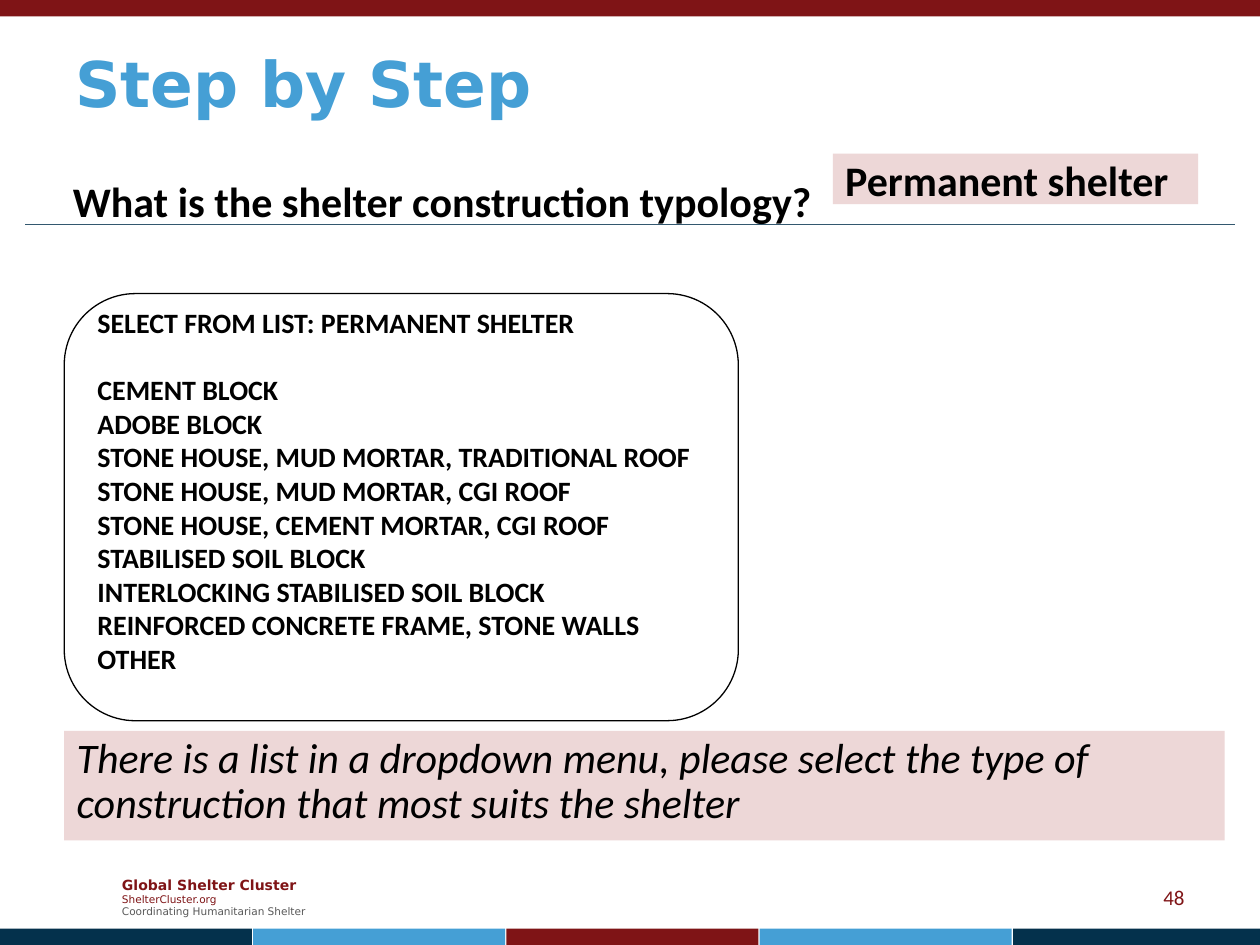
from lxml import etree
from pptx import Presentation, util as u
from pptx.dml.color import RGBColor
from pptx.enum import shapes, text
from pptx.oxml.ns import qn

THEME = {
    "red": "7F1416", "navy": "04314C", "blue": "459FD5", "rule": "33586F",
    "pink": "EDD7D7", "black": "000000", "grey": "595959",
    "body_font": "Calibri", "brand_font": "DejaVu Sans",
    "title": 36, "lead": 24, "list": 16, "number": 12, "footer": 8, "small": 6,
}

TITLE = "Step by Step"
QUESTION = "What is the shelter construction typology?"
ANSWER = "Permanent shelter"
GUIDANCE = ("There is a list in a dropdown menu, please select the type of "
            "construction that most suits the shelter")
LIST_HEADING = "SELECT FROM LIST: PERMANENT SHELTER"
TYPOLOGIES = [
    "CEMENT BLOCK",
    "ADOBE BLOCK",
    "STONE HOUSE, MUD MORTAR, TRADITIONAL ROOF",
    "STONE HOUSE, MUD MORTAR, CGI ROOF",
    "STONE HOUSE, CEMENT MORTAR, CGI ROOF",
    "STABILISED SOIL BLOCK",
    "INTERLOCKING STABILISED SOIL BLOCK",
    "REINFORCED CONCRETE FRAME, STONE WALLS",
    "OTHER",
]
BAND_COLOURS = ["navy", "blue", "red", "blue", "navy"]
PAGE_NUMBER = "48"

RECT = shapes.MSO_SHAPE.RECTANGLE
ROUNDED = shapes.MSO_SHAPE.ROUNDED_RECTANGLE
MIDDLE = text.MSO_ANCHOR.MIDDLE
LIST_LINE = 19.5  # points, one line of the list


def colour(name):
    return RGBColor.from_string(THEME[name])


def style(size, tint="black", font="body_font", **extra):
    return {"size": u.Pt(THEME[size]), "tint": tint, "name": THEME[font], **extra}


def write(box, lines, anchor=text.MSO_ANCHOR.TOP, **layout):
    """Fill a box with (wording, style) lines; layout applies to each paragraph."""
    frame = box.text_frame
    frame.word_wrap = True
    frame.vertical_anchor = anchor
    for index, (wording, look) in enumerate(lines):
        para = frame.add_paragraph() if index else frame.paragraphs[0]
        for key, value in {"alignment": text.PP_ALIGN.LEFT, **layout}.items():
            setattr(para, key, value)
        span = para.add_run()
        span.text = wording
        for key, value in look.items():
            if key == "tint":
                span.font.color.rgb = colour(value)
            else:
                setattr(span.font, key, value)
    return frame


def add_box(page, place, kind=RECT, fill=None, line=None):
    box = page.shapes.add_shape(kind, *map(u.Inches, place))
    box.shadow.inherit = False
    if fill:
        box.fill.solid()
        box.fill.fore_color.rgb = colour(fill)
    else:
        box.fill.background()
    if line:
        box.line.color.rgb = colour(line)
        box.line.width = u.Pt(0.75)
    else:
        box.line.fill.background()
    return box


def add_label(page, place, lines, **layout):
    return write(page.shapes.add_textbox(*map(u.Inches, place)), lines, **layout)


def add_frame(page):
    add_box(page, (0, 0, 10, 0.13), fill="red")
    width = 10 / len(BAND_COLOURS)
    for index, name in enumerate(BAND_COLOURS):
        add_box(page, (index * (width + 0.01), 7.37, width, 0.13), fill=name)
    rule = page.shapes.add_connector(
        shapes.MSO_CONNECTOR.STRAIGHT, *map(u.Inches, (0.2, 1.78, 9.8, 1.78)))
    rule.line.color.rgb = colour("rule")
    rule.line.width = u.Pt(0.75)
    etree.SubElement(rule.element.spPr, qn("a:effectLst"))
    add_label(page, (0.87, 6.9, 1.73, 0.44), [
        ("Global Shelter Cluster", style("footer", "red", "brand_font", bold=True)),
        ("ShelterCluster.org", style("small", "red", "brand_font")),
        ("Coordinating Humanitarian Shelter", style("small", "grey", "brand_font")),
    ], anchor=MIDDLE)
    add_label(page, (7.17, 6.92, 2.33, 0.4), [(PAGE_NUMBER, style("number", "red"))],
              anchor=MIDDLE, alignment=text.PP_ALIGN.RIGHT)


def add_content(page):
    add_label(page, (0.5, 0.3, 9, 0.85),
              [(TITLE, style("title", "blue", "brand_font", bold=True))])
    bold_lead = style("lead", bold=True)
    add_label(page, (0.48, 1.39, 9, 0.55), [(QUESTION, bold_lead)], line_spacing=0.9)

    bold_list = style("list", bold=True)
    panel = add_box(page, (0.51, 2.33, 5.35, 3.39), ROUNDED, line="black")
    frame = write(panel, [(item, bold_list) for item in [LIST_HEADING, *TYPOLOGIES]],
                  anchor=MIDDLE)
    frame.paragraphs[0].space_after = u.Pt(LIST_LINE)
    frame.margin_bottom = u.Inches(0.05) + u.Pt(LIST_LINE)

    for place, wording, look in [
        ((0.51, 5.8, 9.21, 0.87), GUIDANCE, style("lead", italic=True)),
        ((6.61, 1.22, 2.9, 0.4), ANSWER, bold_lead),
    ]:
        write(add_box(page, place, fill="pink"), [(wording, look)], line_spacing=0.9)


def main():
    deck = Presentation()
    deck.slide_width, deck.slide_height = u.Inches(10), u.Inches(7.5)
    page = deck.slides.add_slide(deck.slide_layouts[6])
    add_frame(page)
    add_content(page)
    deck.save("out.pptx")


if __name__ == "__main__":
    main()
